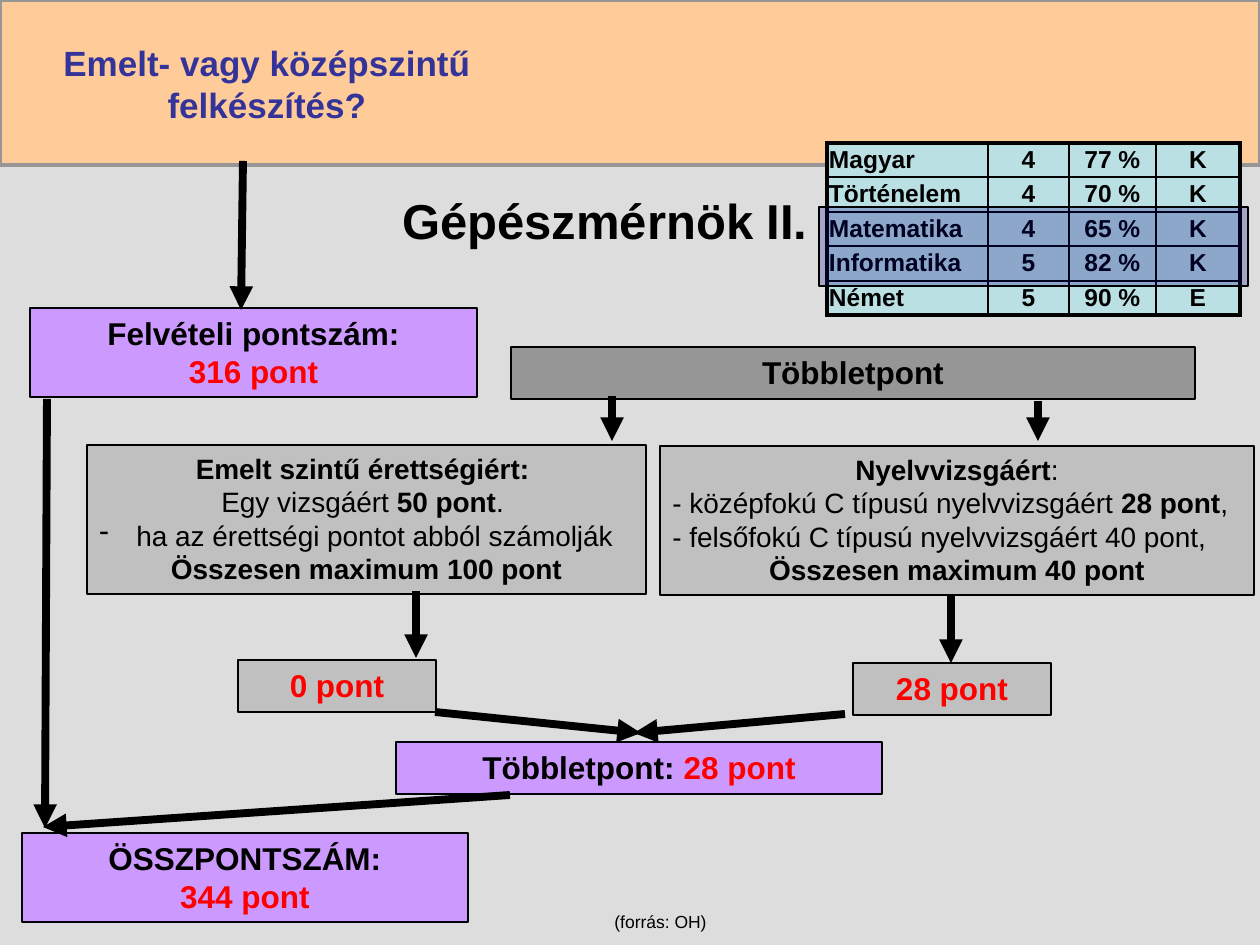
from lxml.etree import SubElement
from pptx import Presentation
from pptx.dml.color import RGBColor
from pptx.enum.shapes import MSO_CONNECTOR, MSO_SHAPE
from pptx.enum.text import MSO_ANCHOR, MSO_AUTO_SIZE, PP_ALIGN
from pptx.oxml.ns import qn
from pptx.util import Emu, Pt

BLACK = RGBColor(0x00, 0x00, 0x00)
RED = RGBColor(0xFF, 0x00, 0x00)
INDIGO = RGBColor(0x33, 0x33, 0x99)
NAVY = RGBColor(0x00, 0x00, 0x80)
PEACH = RGBColor(0xFF, 0xCC, 0x99)
LILAC = RGBColor(0xCC, 0x99, 0xFF)
PALE_GREY = RGBColor(0xDD, 0xDD, 0xDD)
SILVER = RGBColor(0xC0, 0xC0, 0xC0)
GREY = RGBColor(0x96, 0x96, 0x96)
PALE_TEAL = RGBColor(0xBB, 0xE0, 0xE3)

LEFT, CENTER = PP_ALIGN.LEFT, PP_ALIGN.CENTER
PLAIN = {"bold": False}
ACCENT = {"color": RED}


def px(*lengths):
    return [Emu(round(length * 914400 / 126)) for length in lengths]


def add_span(para, text, size=18, color=BLACK, bold=True):
    span = para.add_run()
    span.text = text
    span.font.name = "Arial"
    span.font.size = Pt(size)
    span.font.bold = bold
    span.font.color.rgb = color


class SlideBuilder:
    def __init__(self, deck):
        self.slide = deck.slides.add_slide(deck.slide_layouts[5])
        self.shapes = self.slide.shapes

    def rectangle(self, place, fill, line=BLACK, width=0.75, opacity=None):
        box = self.shapes.add_shape(MSO_SHAPE.RECTANGLE, *px(*place))
        box.shadow.inherit = False
        box.fill.solid()
        box.fill.fore_color.rgb = fill
        if opacity is not None:
            color = next(box.element.spPr.iter(qn("a:srgbClr")))
            SubElement(color, qn("a:alpha"), val=str(opacity * 1000))
        if line is None:
            box.line.fill.background()
        else:
            box.line.color.rgb = line
            box.line.width = Pt(width)
        return box

    def add_text(self, box, paragraphs, size=18, wrap=True):
        frame = box.text_frame
        frame.word_wrap = wrap
        frame.auto_size = MSO_AUTO_SIZE.SHAPE_TO_FIT_TEXT
        frame.vertical_anchor = MSO_ANCHOR.TOP
        for index, (align, bullet, spans) in enumerate(paragraphs):
            para = frame.add_paragraph() if index else frame.paragraphs[0]
            para.alignment = align
            if bullet:
                indent = px(37)[0]
                properties = para._p.get_or_add_pPr()
                properties.set("marL", str(indent))
                properties.set("indent", str(-indent))
                SubElement(properties, qn("a:buChar"), char=bullet)
            for text, style in spans:
                add_span(para, text, **{"size": size, **style})

    def panel(self, place, fill, paragraphs, size=18):
        self.add_text(self.rectangle(place, fill), paragraphs, size)

    def label(self, place, paragraphs, size, wrap=True):
        self.add_text(self.shapes.add_textbox(*px(*place)), paragraphs, size, wrap)

    def title(self, place, text):
        title = self.shapes.title
        title.element.getparent().append(title.element)
        title.left, title.top, title.width, title.height = px(*place)
        frame = title.text_frame
        frame.vertical_anchor = MSO_ANCHOR.MIDDLE
        para = frame.paragraphs[0]
        para.alignment = CENTER
        add_span(para, text, size=28)

    def arrow(self, *ends):
        arrow = self.shapes.add_connector(MSO_CONNECTOR.STRAIGHT, *px(*ends))
        arrow.line.color.rgb = BLACK
        arrow.line.width = Pt(4.5)
        line = arrow.element.spPr.find(qn("a:ln"))
        SubElement(line, qn("a:tailEnd"), type="triangle")
        SubElement(arrow.element.spPr, qn("a:effectLst"))

    def border(self, cell, side, width):
        line = SubElement(cell._tc.get_or_add_tcPr(), qn(f"a:ln{side}"), w=str(Pt(width)))
        fill = SubElement(line, qn("a:solidFill"))
        SubElement(fill, qn("a:srgbClr"), val=str(BLACK))

    def table(self, left, top, widths, heights, rows):
        place = px(left, top, sum(widths), sum(heights))
        table = self.shapes.add_table(len(rows), len(widths), *place).table
        table.first_row = table.horz_banding = False
        for column, width in zip(table.columns, px(*widths)):
            column.width = width
        for row, height in zip(table.rows, px(*heights)):
            row.height = height
        last_row, last_column = len(rows) - 1, len(widths) - 1
        for y, texts in enumerate(rows):
            for x, text in enumerate(texts):
                cell = table.cell(y, x)
                outer = {"L": x == 0, "R": x == last_column, "T": y == 0, "B": y == last_row}
                for side, is_outer in outer.items():
                    self.border(cell, side, 2.25 if is_outer else 1)
                cell.fill.solid()
                cell.fill.fore_color.rgb = PALE_TEAL
                cell.vertical_anchor = MSO_ANCHOR.MIDDLE
                cell.margin_left, cell.margin_right, cell.margin_top, cell.margin_bottom = px(2, 2, 2, 2)
                para = cell.text_frame.paragraphs[0]
                para.alignment = CENTER if x else LEFT
                add_span(para, text, size=14)


def centered(*spans):
    return CENTER, None, spans


def score(heading, points):
    return [centered((heading, {})), centered((points, ACCENT))]


def main():
    deck = Presentation()
    deck.slide_width, deck.slide_height = px(1260, 945)
    page = SlideBuilder(deck)

    page.rectangle((0, 165, 1260, 780), PALE_GREY, line=None)
    page.rectangle((0, 0, 1260, 165), PEACH, line=GREY, width=2)
    heading = centered(("Emelt- vagy középszintű felkészítés?", {"color": INDIGO}))
    page.label((34, 35, 466, 97), [heading], size=20)
    page.title((33, 175, 1144, 90), "Gépészmérnök II.")

    page.panel((30, 308, 447, 89), LILAC, score("Felvételi pontszám:", "316 pont"))
    page.panel((511, 347, 684, 52), GREY, [centered(("Többletpont", {}))])
    page.panel((660, 446, 594, 149), SILVER, [
        centered(("Nyelvvizsgáért", {}), (":", PLAIN)),
        (LEFT, None, [("- középfokú C típusú nyelvvizsgáért ", PLAIN), ("28 pont", {}), (",", PLAIN)]),
        (LEFT, None, [("- felsőfokú C típusú nyelvvizsgáért 40 pont,", PLAIN)]),
        centered(("Összesen maximum 40 pont", {})),
    ], size=16)
    page.panel((87, 445, 559, 149), SILVER, [
        centered(("Emelt szintű érettségiért: ", {})),
        centered(("Egy vizsgáért ", PLAIN), ("50 pont", {}), (". ", PLAIN)),
        (LEFT, "-", [("ha az érettségi pontot abból számolják", PLAIN)]),
        centered(("Összesen maximum 100 pont", {})),
    ], size=16)
    page.panel((238, 660, 198, 52), SILVER, [centered(("0 pont", ACCENT))])
    page.panel((853, 663, 198, 52), SILVER, [centered(("28 pont", ACCENT))])
    page.panel((396, 742, 486, 52), LILAC, [centered(("Többletpont: ", {}), ("28 pont", ACCENT))])
    page.panel((22, 833, 446, 89), LILAC, score("ÖSSZPONTSZÁM:", "344 pont"))
    page.label((602, 905, 117, 34), [(LEFT, None, [("(forrás: OH)", PLAIN)])], size=10, wrap=False)

    for ends in (
        (951, 595, 951, 663),
        (416, 591, 416, 658),
        (1038, 401, 1038, 441),
        (612, 396, 612, 441),
        (435, 712, 641, 733),
        (845, 714, 634, 733),
        (47, 399, 45, 828),
        (510, 795, 43, 827),
        (243, 161, 241, 310),
    ):
        page.arrow(*ends)

    page.table(827, 143, (161, 81, 87, 84), (34, 35, 34, 35, 34), [
        ("Magyar", "4", "77 %", "K"),
        ("Történelem", "4", "70 %", "K"),
        ("Matematika", "4", "65 %", "K"),
        ("Informatika", "5", "82 %", "K"),
        ("Német", "5", "90 %", "E"),
    ])
    page.rectangle((819, 207, 429, 79), NAVY, opacity=25)

    deck.save("out.pptx")


if __name__ == "__main__":
    main()
